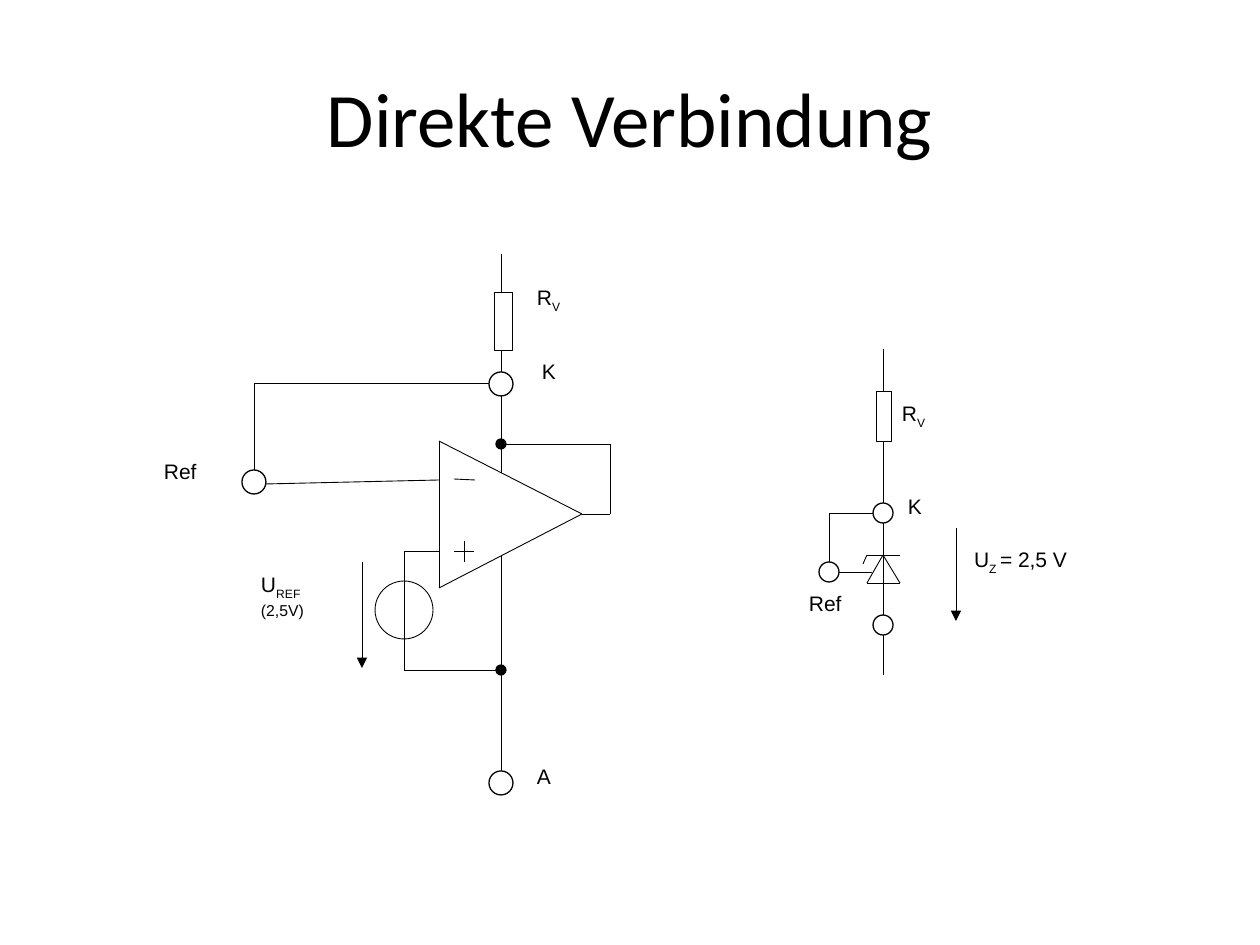
from dataclasses import dataclass
from itertools import pairwise

from lxml import etree
from pptx import Presentation
from pptx import util as u
from pptx.dml.color import RGBColor
from pptx.enum import shapes, text
from pptx.oxml.ns import qn


@dataclass(frozen=True)
class Theme:
    ink: RGBColor = RGBColor(0, 0, 0)
    paper: RGBColor = RGBColor(255, 255, 255)
    head: str = "Calibri"
    body: str = "Arial"
    title: int = 44
    label: int = 12
    note: int = 9
    thin: float = 0.5
    bold: float = 0.75


THEME = Theme()


def px(n):
    return u.Emu(round(n * 914400 / 126))


def style(font, name, size):
    font.name = name
    font.size = u.Pt(size)
    font.color.rgb = THEME.ink


def title(slide, words):
    box = slide.shapes.title
    box.left, box.top, box.width, box.height = map(px, (63, 38, 1134, 158))
    box.text_frame.text = words
    box.text_frame.vertical_anchor = text.MSO_ANCHOR.MIDDLE
    para = box.text_frame.paragraphs[0]
    para.alignment = text.PP_ALIGN.CENTER
    style(para.font, THEME.head, THEME.title)


def wire(slide, *points, arrow=False):
    for start, end in pairwise(points):
        line = slide.shapes.add_connector(
            shapes.MSO_CONNECTOR.STRAIGHT, *map(px, start + end))
        line.line.color.rgb = THEME.ink
        line.line.width = u.Pt(THEME.thin)
        props = line._element.spPr
        if arrow:
            etree.SubElement(props.find(qn("a:ln")), qn("a:tailEnd"), type="triangle")
        etree.SubElement(props, qn("a:effectLst"))


def shape(slide, kind, x, y, w, h, fill, weight):
    item = slide.shapes.add_shape(kind, *map(px, (x, y, w, h)))
    item.shadow.inherit = False
    if fill is None:
        item.fill.background()
    else:
        item.fill.solid()
        item.fill.fore_color.rgb = fill
    item.line.color.rgb = THEME.ink
    item.line.width = u.Pt(weight)


def ring(slide, x, y, r, fill=THEME.paper, weight=THEME.bold):
    shape(slide, shapes.MSO_SHAPE.OVAL, x - r, y - r, 2 * r, 2 * r, fill, weight)


def dot(slide, x, y):
    ring(slide, x, y, 5, THEME.ink)


def resist(slide, x, y, w, h):
    shape(slide, shapes.MSO_SHAPE.RECTANGLE, x, y, w, h, THEME.paper, THEME.thin)


def label(slide, words, x, y, w, h, note=None, pad=(0, 0)):
    box = slide.shapes.add_textbox(*map(px, (x, y, w, h)))
    box.fill.solid()
    box.fill.fore_color.rgb = THEME.paper
    frame = box.text_frame
    frame.word_wrap = True
    frame.margin_left = frame.margin_right = px(pad[0])
    frame.margin_top = frame.margin_bottom = px(pad[1])
    para = frame.paragraphs[0]
    style(para.font, THEME.body, THEME.label)
    for i, part in enumerate(words.split("_")):
        run = para.add_run()
        run.text = part
        if i % 2:
            run._r.get_or_add_rPr().set("baseline", "-25000")
    if note:
        para = frame.add_paragraph()
        para.text = note
        style(para.font, THEME.body, THEME.note)


def inner(slide):
    axis, left = 501, 254
    wire(slide, (439, 441), (582, 514), (439, 588), (439, 441))
    wire(slide, (582, 514), (610, 514), (610, 444), (axis, 444))
    wire(slide, (454, 479), (475, 480))
    wire(slide, (454, 551), (474, 551))
    wire(slide, (464, 562), (464, 541))
    wire(slide, (439, 480), (266, 484))
    wire(slide, (439, 551), (404, 551), (404, 670), (axis, 670))
    wire(slide, (axis, 254), (axis, 473))
    wire(slide, (axis, 556), (axis, 772))
    wire(slide, (axis, 383), (left, 383), (left, 484))
    dot(slide, axis, 444)
    dot(slide, axis, 670)
    ring(slide, 404, 610, 29, None, THEME.thin)
    for x, y in ((axis, 783), (axis, 384), (left, 482)):
        ring(slide, x, y, 12)
    resist(slide, 494, 292, 19, 59)
    label(slide, "U_REF", 261, 572, 84, 87, note="(2,5V)")
    wire(slide, (362, 562), (362, 668), arrow=True)
    label(slide, "R_V", 537, 285, 45, 47)
    label(slide, "K", 542, 359, 45, 47)
    label(slide, "A", 537, 764, 45, 47)
    label(slide, "Ref", 164, 459, 64, 47)


def symbol(slide):
    axis, left = 883, 829
    wire(slide, (axis, 349), (axis, 675))
    wire(slide, (872, 572), (838, 572))
    wire(slide, (867, 583), (900, 583), (axis, 555), (867, 583))
    wire(slide, (863, 564), (867, 555), (900, 555))
    wire(slide, (axis, 513), (left, 513), (left, 570))
    for x, y in ((axis, 513), (axis, 625), (left, 572)):
        ring(slide, x, y, 10)
    resist(slide, 877, 391, 15, 51)
    label(slide, "R_V", 902, 401, 37, 40)
    label(slide, "K", 908, 494, 37, 40)
    label(slide, "Ref", 809, 591, 52, 40)
    label(slide, "U_Z _= 2,5 V", 961, 541, 184, 63, pad=(13, 6))
    wire(slide, (956, 528), (956, 621), arrow=True)


def main():
    deck = Presentation()
    deck.slide_width, deck.slide_height = px(1260), px(945)
    slide = deck.slides.add_slide(deck.slide_layouts[5])
    title(slide, "Direkte Verbindung")
    inner(slide)
    symbol(slide)
    deck.save("out.pptx")


if __name__ == "__main__":
    main()
